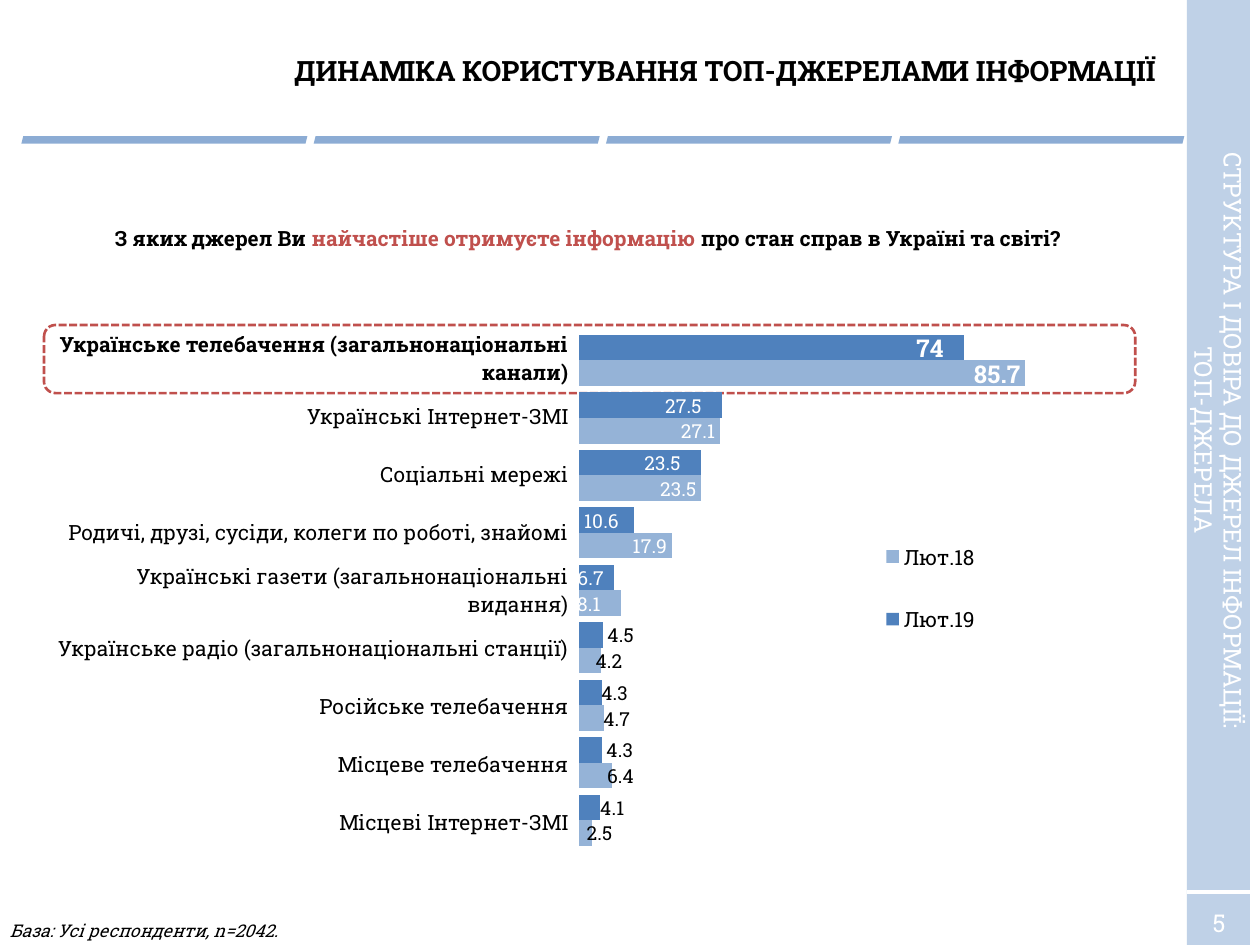
import pptx
import pptx.chart.data
import pptx.dml.color
import pptx.enum.chart
import pptx.enum.dml
import pptx.enum.shapes
import pptx.enum.text
import pptx.oxml
import pptx.oxml.ns
import pptx.util

RGBColor = pptx.dml.color.RGBColor
Inches = pptx.util.Inches
Pt = pptx.util.Pt
Shape = pptx.enum.shapes.MSO_SHAPE
Align = pptx.enum.text.PP_ALIGN
Anchor = pptx.enum.text.MSO_ANCHOR
Position = pptx.enum.chart.XL_LABEL_POSITION

BLUE = RGBColor(0x4F, 0x81, 0xBD)
PALE = RGBColor(0x95, 0xB3, 0xD7)
RED = RGBColor(0xC0, 0x50, 0x4D)
BLACK = RGBColor(0, 0, 0)
WHITE = RGBColor(255, 255, 255)
FONT = "Roboto Slab"
ROW = 0.46
INSIDE_ROWS = 5
NO_LEADERS = (
    f'<c:extLst {pptx.oxml.ns.nsdecls("c")}><c:ext uri="{{CE6537A1-D6FC-4f65-9D91-7224C49458BB}}"'
    ' xmlns:c15="http://schemas.microsoft.com/office/drawing/2012/chart">'
    '<c15:showLeaderLines val="0"/></c:ext></c:extLst>')

SOURCES = [
    "Українське телебачення (загальнонаціональні канали)",
    "Українські Інтернет-ЗМІ",
    "Соціальні мережі",
    "Родичі, друзі, сусіди, колеги по роботі, знайомі",
    "Українські газети (загальнонаціональні видання)",
    "Українське радіо (загальнонаціональні станції)",
    "Російське телебачення",
    "Місцеве телебачення",
    "Місцеві Інтернет-ЗМІ",
]
SERIES = [
    ("Лют.19", BLUE, [74, 27.5, 23.5, 10.6, 6.7, 4.5, 4.3, 4.3, 4.1],
     [-0.03, -0.03, -0.03, -0.02, -0.01, 0, -0.01, 0, -0.01]),
    ("Лют.18", PALE, [85.7, 27.1, 23.5, 17.9, 8.1, 4.2, 4.7, 6.4, 2.5],
     [0, 0, 0, 0, -0.03, -0.02, -0.01, -0.02, -0.02]),
]


def style(font, size, color=BLACK, **values):
    """Apply the deck font with a size, a colour and further values."""
    for name, value in {"name": FONT, "size": Pt(size), **values}.items():
        setattr(font, name, value)
    font.color.rgb = color


def write(frame, lines, size, align, **values):
    """Fill a frame with lines, each a list of (text, colour) spans."""
    frame.word_wrap = True
    for index, spans in enumerate(lines):
        para = frame.add_paragraph() if index else frame.paragraphs[0]
        para.alignment = align
        for text, color in spans:
            span = para.add_run()
            span.text = text
            style(span.font, size, color, **values)


def add_text(page, area, lines, size, align=Align.CENTER, anchor=Anchor.TOP, **values):
    """Add a wrapped text box."""
    box = page.shapes.add_textbox(*map(Inches, area))
    box.text_frame.vertical_anchor = anchor
    write(box.text_frame, lines, size, align, **values)
    return box


def add_block(page, kind, area, color, alpha):
    """Add a borderless translucent shape."""
    block = page.shapes.add_shape(kind, *map(Inches, area))
    block.shadow.inherit = False
    block.fill.solid()
    block.fill.fore_color.rgb = color
    block.line.fill.background()
    tint = block.fill._xPr.find(".//" + pptx.oxml.ns.qn("a:srgbClr"))
    tint.append(pptx.oxml.parse_xml(
        f'<a:alpha {pptx.oxml.ns.nsdecls("a")} val="{alpha * 1000}"/>'))


def add_frame(page):
    """Add the side bar with its number rule and the row of header stripes."""
    add_block(page, Shape.RECTANGLE, (9.42, 0, 0.5, 7.5), PALE, 60)
    for column in range(4):
        add_block(page, Shape.PARALLELOGRAM, (0.17 + 2.32 * column, 1.08, 2.27, 0.06), BLUE, 65)
    rule = page.shapes.add_connector(
        pptx.enum.shapes.MSO_CONNECTOR.STRAIGHT, *map(Inches, (9.42, 7.08, 9.92, 7.08)))
    rule.line.color.rgb = WHITE
    rule.line.width = Pt(2)
    rule._element.spPr.append(
        pptx.oxml.parse_xml(f'<a:effectLst {pptx.oxml.ns.nsdecls("a")}/>'))


def add_title(page, text):
    """Fill and move the title placeholder."""
    title = page.shapes.title
    area = dict(zip(("left", "top", "width", "height"), (2.17, 0.18, 7.17, 0.75)))
    for name, value in area.items():
        setattr(title, name, Inches(value))
    title.text_frame.vertical_anchor = Anchor.MIDDLE
    write(title.text_frame, [[(text, BLACK)]], 16, Align.CENTER, bold=True)


def add_sources(page):
    """Add the table that names the bars."""
    table = page.shapes.add_table(
        len(SOURCES), 2, *map(Inches, (0.35, 2.61, 8.74, ROW * len(SOURCES)))).table
    table.first_row = table.horz_banding = False
    for column, width in zip(table.columns, (4.17, 4.57)):
        column.width = Inches(width)
    for cell in table.iter_cells():
        cell.fill.background()
    margins = {"margin_left": 0.01, "margin_right": 0.01, "margin_top": 0.01, "margin_bottom": 0}
    for row, text in enumerate(SOURCES):
        cell = table.cell(row, 0)
        for name, value in margins.items():
            setattr(cell, name, Inches(value))
        cell.vertical_anchor = Anchor.MIDDLE
        write(cell.text_frame, [[(text, BLACK)]], 12, Align.RIGHT, bold=row == 0)


def add_highlight(page):
    """Add the dashed outline around the top row."""
    outline = page.shapes.add_shape(
        Shape.ROUNDED_RECTANGLE, *map(Inches, (0.35, 2.58, 8.66, 0.54)))
    outline.shadow.inherit = False
    outline.fill.background()
    outline.line.color.rgb = RED
    outline.line.width = Pt(1.5)
    outline.line.dash_style = pptx.enum.dml.MSO_LINE.SQUARE_DOT


def set_layout(parent, index, modes="", **shares):
    """Give a chart part a manual layout in shares of the chart."""
    for old in parent.findall(pptx.oxml.ns.qn("c:layout")):
        parent.remove(old)
    values = "".join(f'<c:{name} val="{value}"/>' for name, value in shares.items())
    parent.insert(index, pptx.oxml.parse_xml(
        f'<c:layout {pptx.oxml.ns.nsdecls("c")}><c:manualLayout>'
        f'{modes}{values}</c:manualLayout></c:layout>'))


def label_points(series, shifts):
    """Label long bars inside and short bars outside, without leader lines."""
    for row, shift in enumerate(shifts):
        inside = row < INSIDE_ROWS
        label = series.points[row].data_label
        style(label.font, 11 if row else 14, WHITE if inside else BLACK, bold=row == 0)
        label.position = Position.INSIDE_END if inside else Position.OUTSIDE_END
        if shift:
            element = series._element.xpath(f'c:dLbls/c:dLbl[c:idx/@val="{row}"]')[0]
            set_layout(element, 1, x=shift, y=0)
    labels = series._element.xpath("c:dLbls")[0]
    for leader in labels.findall(pptx.oxml.ns.qn("c:showLeaderLines")):
        leader.set("val", "0")
    labels.append(pptx.oxml.parse_xml(NO_LEADERS))


def add_bars(page):
    """Add the chart that compares both waves."""
    data = pptx.chart.data.CategoryChartData()
    data.categories = [str(row + 1) for row in range(len(SOURCES))]
    for name, color, values, shifts in SERIES:
        data.add_series(name, values)
    chart = page.shapes.add_chart(
        pptx.enum.chart.XL_CHART_TYPE.BAR_CLUSTERED,
        *map(Inches, (4.58, 2.63, 4.15, 4.11)), data).chart
    style(chart.font, 14)
    chart.has_title = False
    chart.category_axis.reverse_order = True
    axis_format = {"minimum_scale": 0, "maximum_scale": 100, "has_major_gridlines": False}
    for name, value in axis_format.items():
        setattr(chart.value_axis, name, value)
    chart.category_axis.visible = chart.value_axis.visible = False
    plot = chart.plots[0]
    for name, value in {"gap_width": 25, "overlap": 0, "vary_by_categories": False}.items():
        setattr(plot, name, value)
    for series, (name, color, values, shifts) in zip(plot.series, SERIES):
        series.format.fill.solid()
        series.format.fill.fore_color.rgb = color
        series.data_labels.show_value = True
        style(series.data_labels.font, 11)
        label_points(series, shifts)
    chart.has_legend = True
    chart.legend.position = pptx.enum.chart.XL_LEGEND_POSITION.RIGHT
    chart.legend.include_in_layout = False
    style(chart.legend.font, 12)
    edge = '<c:xMode val="edge"/><c:yMode val="edge"/>'
    set_layout(chart.legend._element, 1, edge, x=0.56, y=0.34, w=0.23, h=0.31)
    inner = '<c:layoutTarget val="inner"/>' + edge
    set_layout(chart._chartSpace.chart.plotArea, 0, inner, x=0, y=0, w=1, h=1)


def main():
    """Build the slide and save the deck."""
    deck = pptx.Presentation()
    deck.slide_width, deck.slide_height = Inches(10), Inches(7.5)
    page = deck.slides.add_slide(deck.slide_layouts[5])
    add_frame(page)
    add_text(page, (9.38, 7.15, 0.59, 0.34), [[("5", WHITE)]], 14, anchor=Anchor.MIDDLE)
    add_title(page, "ДИНАМІКА КОРИСТУВАННЯ ТОП-ДЖЕРЕЛАМИ ІНФОРМАЦІЇ")
    section = [[("СТРУКТУРА І ДОВІРА ДО ДЖЕРЕЛ ІНФОРМАЦІЇ:", WHITE)], [("ТОП-ДЖЕРЕЛА", WHITE)]]
    add_text(page, (6.92, 3.21, 5.5, 0.57), section, 14).rotation = 90
    add_sources(page)
    add_highlight(page)
    question = [("З яких джерел Ви ", BLACK), ("найчастіше отримуєте інформацію ", RED),
                ("про стан справ в Україні та світі?", BLACK)]
    add_text(page, (0.61, 1.74, 8.11, 0.5), [question], 12, bold=True)
    add_bars(page)
    base = [[("База: Усі респонденти, n=2042.", BLACK)]]
    add_text(page, (-0.02, 7.25, 9.42, 0.27), base, 10, Align.LEFT, italic=True)
    deck.save("out.pptx")


if __name__ == "__main__":
    main()
